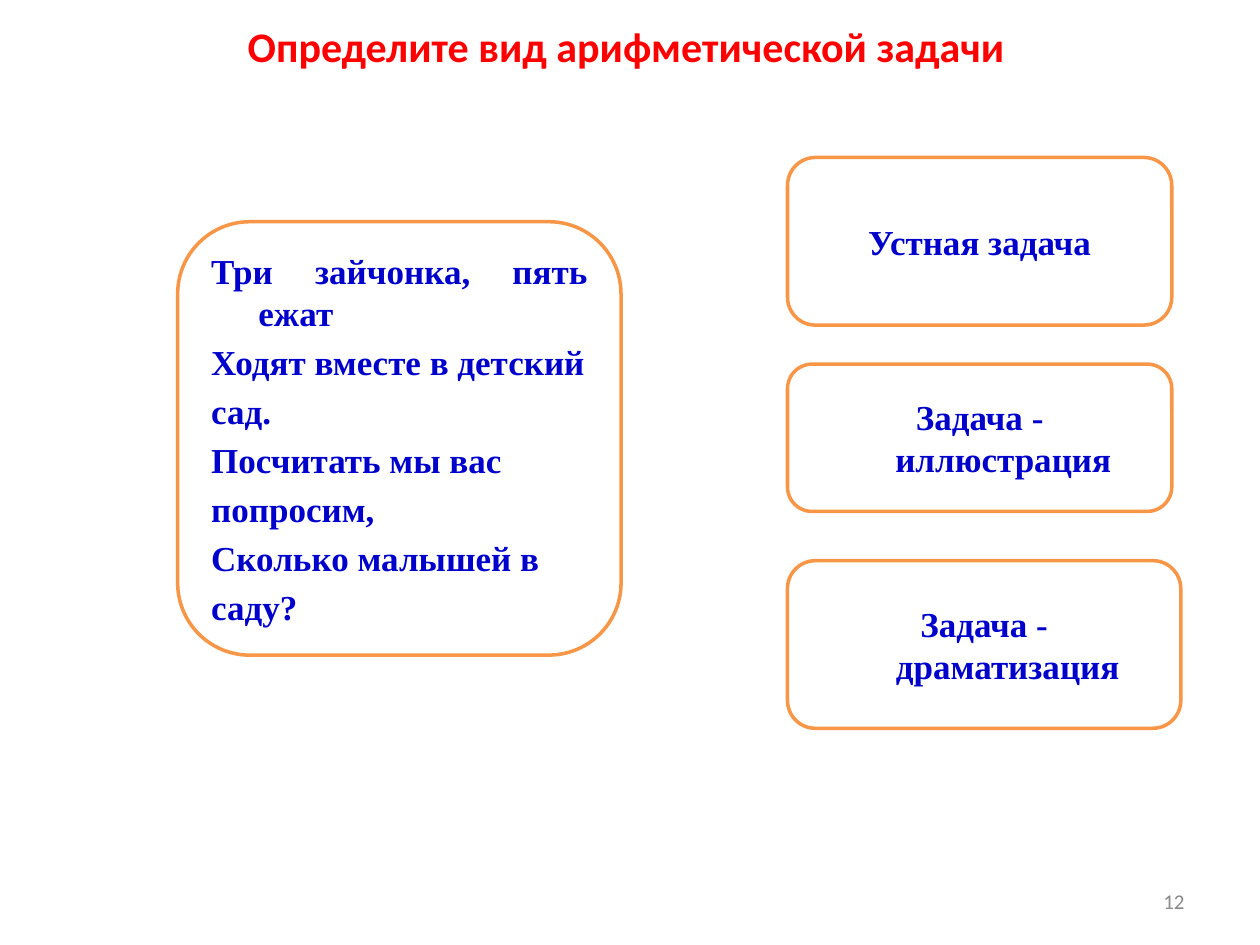
"""Build the slide asking for the kind of an arithmetic problem."""
from dataclasses import dataclass

from pptx import Presentation
from pptx.dml.color import RGBColor
from pptx.enum.shapes import MSO_SHAPE
from pptx.enum.text import MSO_ANCHOR, PP_ALIGN
from pptx.shapes.base import BaseShape
from pptx.slide import Slide
from pptx.text.text import TextFrame
from pptx.util import Pt

COLOURS = {
    "title": "FF0000",
    "card_text": "0000CC",
    "card_fill": "FFFFFF",
    "card_line": "F79646",
    "number": "898989",
}
HANGING_INDENT = Pt(27)
PARAGRAPH_GAP = Pt(4)


@dataclass(frozen=True)
class Box:
    """Position and size in points."""
    left: float
    top: float
    width: float
    height: float


@dataclass(frozen=True)
class TextStyle:
    """Look of the text in a shape."""
    font: str
    size: float
    colour: str
    bold: bool
    alignment: PP_ALIGN


@dataclass(frozen=True)
class Card:
    """Rounded card with its lines of text."""
    box: Box
    lines: tuple[str, ...]
    alignment: PP_ALIGN = PP_ALIGN.CENTER


CARDS = (
    Card(
        Box(101.5, 126.7, 253.4, 247.7),
        (
            "Три зайчонка, пять ежат",
            "Ходят вместе в детский",
            "сад.",
            "Посчитать мы вас",
            "попросим,",
            "Сколько малышей в",
            "саду?",
        ),
        PP_ALIGN.JUSTIFY,
    ),
    Card(Box(450, 90, 219.6, 95.8), ("Устная задача",)),
    Card(Box(450, 208.1, 219.6, 84.2), ("Задача - иллюстрация",)),
    Card(Box(450, 320.4, 224.8, 95.8), ("Задача - драматизация",)),
)


def colour(name: str) -> RGBColor:
    """Return the named colour."""
    return RGBColor.from_string(COLOURS[name])


def lengths(box: Box) -> tuple[Pt, Pt, Pt, Pt]:
    """Return the box as slide lengths."""
    return Pt(box.left), Pt(box.top), Pt(box.width), Pt(box.height)


def write_text(shape: BaseShape, lines: tuple[str, ...], style: TextStyle) -> TextFrame:
    """Write one paragraph per line and format the runs."""
    text_frame = shape.text_frame
    text_frame.word_wrap = True
    text_frame.vertical_anchor = MSO_ANCHOR.MIDDLE
    text_frame.text = "\n".join(lines)
    for paragraph in text_frame.paragraphs:
        paragraph.alignment = style.alignment
        for run in paragraph.runs:
            run.font.name = style.font
            run.font.size = Pt(style.size)
            run.font.bold = style.bold
            run.font.color.rgb = colour(style.colour)
    return text_frame


def add_label(slide: Slide, box: Box, text: str, style: TextStyle) -> None:
    """Add a text box with a single line."""
    write_text(slide.shapes.add_textbox(*lengths(box)), (text,), style)


def add_card(slide: Slide, card: Card) -> None:
    """Add a rounded card with hanging paragraphs."""
    shape = slide.shapes.add_shape(MSO_SHAPE.ROUNDED_RECTANGLE, *lengths(card.box))
    shape.shadow.inherit = False
    shape.fill.solid()
    shape.fill.fore_color.rgb = colour("card_fill")
    shape.line.color.rgb = colour("card_line")
    shape.line.width = Pt(2)
    style = TextStyle("Times New Roman", 20, "card_text", True, card.alignment)
    text_frame = write_text(shape, card.lines, style)
    for index, paragraph in enumerate(text_frame.paragraphs):
        properties = paragraph._p.get_or_add_pPr()
        properties.set("marL", str(HANGING_INDENT))
        properties.set("indent", str(-HANGING_INDENT))
        if index:
            paragraph.space_before = PARAGRAPH_GAP


def main() -> None:
    """Build and save the presentation."""
    presentation = Presentation()
    presentation.slide_width, presentation.slide_height = Pt(720), Pt(540)
    slide = presentation.slides.add_slide(presentation.slide_layouts[6])
    add_label(
        slide,
        Box(33.8, 0, 648, 51.8),
        "Определите вид арифметической задачи",
        TextStyle("Calibri", 24, "title", True, PP_ALIGN.CENTER),
    )
    for card in CARDS:
        add_card(slide, card)
    add_label(
        slide,
        Box(516, 500.5, 168, 28.8),
        "12",
        TextStyle("Calibri", 12, "number", False, PP_ALIGN.RIGHT),
    )
    presentation.save("out.pptx")


if __name__ == "__main__":
    main()
